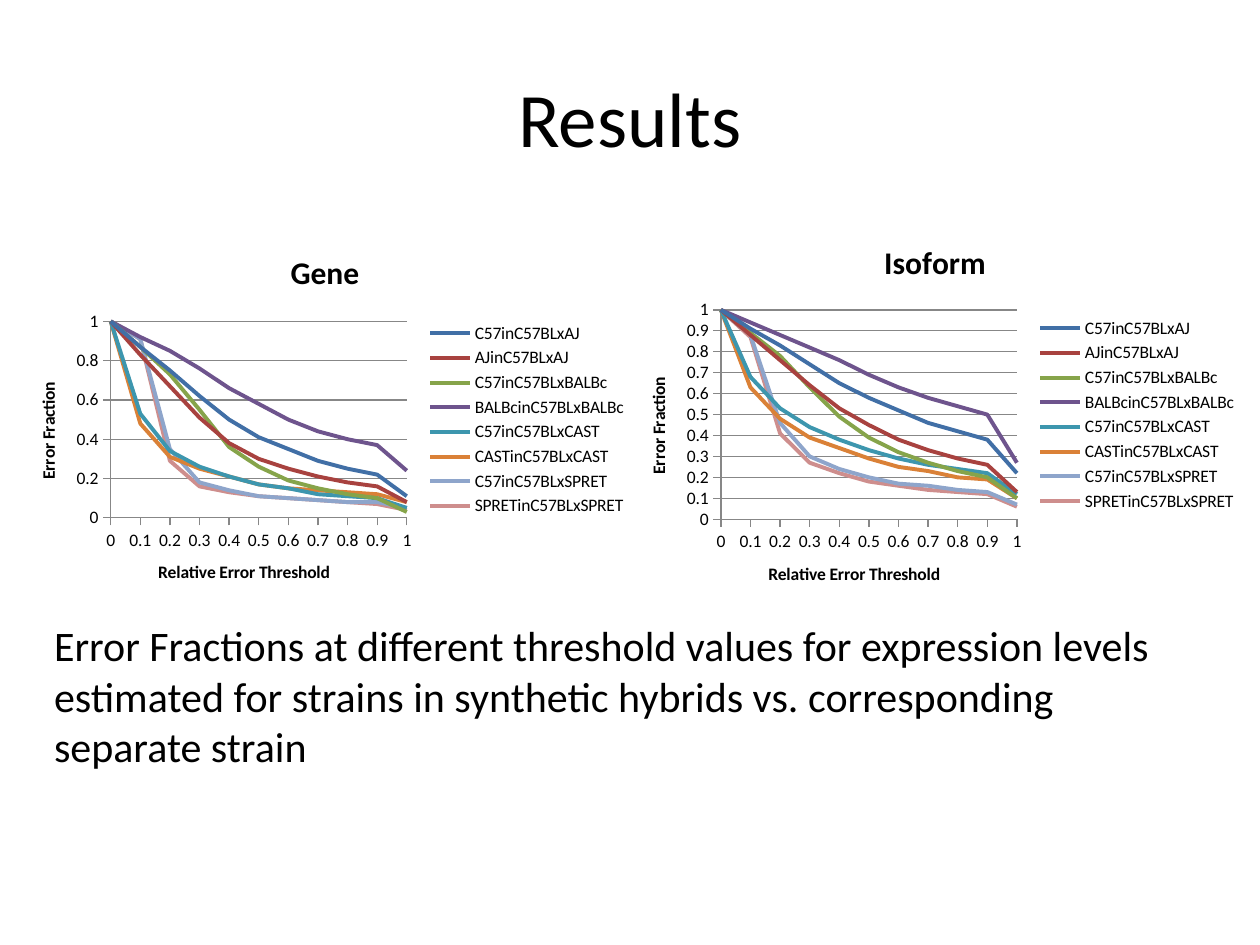
import pptx
import pptx.util
import pptx.chart.data
import pptx.dml.color
import pptx.enum.chart
import pptx.enum.text
import pptx.oxml

Cm = pptx.util.Cm
Pt = pptx.util.Pt
RGBColor = pptx.dml.color.RGBColor

FONT = "Calibri"
BLACK = RGBColor(0x00, 0x00, 0x00)
GRAY = RGBColor(0x87, 0x87, 0x87)

TITLE = "Results"
CAPTION = [
    "Error Fractions at different threshold values for expression levels "
    "estimated for strains in synthetic hybrids vs. corresponding",
    "separate strain",
]
X_TITLE = "Relative Error Threshold"
Y_TITLE = "Error Fraction"
THRESHOLDS = [step / 10 for step in range(11)]

STRAINS = [
    ("C57inC57BLxAJ", RGBColor(0x41, 0x6F, 0xA6)),
    ("AJinC57BLxAJ", RGBColor(0xA8, 0x42, 0x3F)),
    ("C57inC57BLxBALBc", RGBColor(0x86, 0xA4, 0x4A)),
    ("BALBcinC57BLxBALBc", RGBColor(0x6E, 0x54, 0x8D)),
    ("C57inC57BLxCAST", RGBColor(0x3D, 0x96, 0xAE)),
    ("CASTinC57BLxCAST", RGBColor(0xDA, 0x81, 0x37)),
    ("C57inC57BLxSPRET", RGBColor(0x8E, 0xA5, 0xCB)),
    ("SPRETinC57BLxSPRET", RGBColor(0xCE, 0x8E, 0x8D)),
]

CHARTS = [
    {
        "title": "Gene",
        "box": (0.2, 4.65, 12.7, 7.62),
        "plot": (0.16, 0.24, 0.47, 0.52),
        "unit": 0.2,
        "fractions": [
            [1, 0.87, 0.75, 0.62, 0.5, 0.41, 0.35, 0.29, 0.25, 0.22, 0.11],
            [1, 0.83, 0.67, 0.51, 0.38, 0.3, 0.25, 0.21, 0.18, 0.16, 0.08],
            [1, 0.87, 0.73, 0.55, 0.36, 0.26, 0.19, 0.15, 0.12, 0.1, 0.03],
            [1, 0.92, 0.85, 0.76, 0.66, 0.58, 0.5, 0.44, 0.4, 0.37, 0.24],
            [1, 0.53, 0.34, 0.26, 0.21, 0.17, 0.15, 0.12, 0.11, 0.1, 0.05],
            [1, 0.48, 0.31, 0.25, 0.21, 0.17, 0.15, 0.14, 0.13, 0.12, 0.08],
            [1, 0.91, 0.35, 0.18, 0.14, 0.11, 0.1, 0.09, 0.08, 0.08, 0.05],
            [1, 0.91, 0.29, 0.16, 0.13, 0.11, 0.1, 0.09, 0.08, 0.07, 0.04],
        ],
    },
    {
        "title": "Isoform",
        "box": (12.5, 4.45, 12.7, 7.82),
        "plot": (0.16, 0.23, 0.47, 0.54),
        "unit": 0.1,
        "fractions": [
            [1, 0.91, 0.83, 0.74, 0.65, 0.58, 0.52, 0.46, 0.42, 0.38, 0.22],
            [1, 0.88, 0.76, 0.64, 0.53, 0.45, 0.38, 0.33, 0.29, 0.26, 0.13],
            [1, 0.89, 0.78, 0.63, 0.49, 0.39, 0.32, 0.27, 0.23, 0.2, 0.1],
            [1, 0.94, 0.88, 0.82, 0.76, 0.69, 0.63, 0.58, 0.54, 0.5, 0.27],
            [1, 0.68, 0.53, 0.44, 0.38, 0.33, 0.29, 0.26, 0.24, 0.22, 0.12],
            [1, 0.63, 0.48, 0.39, 0.34, 0.29, 0.25, 0.23, 0.2, 0.19, 0.1],
            [1, 0.88, 0.46, 0.3, 0.24, 0.2, 0.17, 0.16, 0.14, 0.13, 0.07],
            [1, 0.87, 0.41, 0.27, 0.22, 0.18, 0.16, 0.14, 0.13, 0.12, 0.06],
        ],
    },
]


def write_text(text_frame, text, size, bold=False, align=None):
    lines = [text] if isinstance(text, str) else text
    for index, line in enumerate(lines):
        paragraph = text_frame.add_paragraph() if index else text_frame.paragraphs[0]
        paragraph.alignment = align
        run = paragraph.add_run()
        run.text = line
        run.font.name = FONT
        run.font.size = Pt(size)
        run.font.bold = bold
        run.font.color.rgb = BLACK


def place_plot(chart, fractions):
    namespace = "http://schemas.openxmlformats.org/drawingml/2006/chart"
    parts = "".join(
        f'<c:{name} val="{value}"/>' for name, value in zip("xywh", fractions)
    )
    layout = pptx.oxml.parse_xml(
        f'<c:layout xmlns:c="{namespace}"><c:manualLayout>'
        '<c:layoutTarget val="inner"/><c:xMode val="edge"/><c:yMode val="edge"/>'
        f"{parts}</c:manualLayout></c:layout>"
    )
    plot_area = chart.element.find(f".//{{{namespace}}}plotArea")
    for old_layout in plot_area.findall(f"{{{namespace}}}layout"):
        plot_area.remove(old_layout)
    plot_area.insert(0, layout)


def format_axis(axis, title, unit, gridlines):
    axis.minimum_scale, axis.maximum_scale = 0, 1
    axis.major_unit = unit
    axis.major_tick_mark = pptx.enum.chart.XL_TICK_MARK.OUTSIDE
    axis.minor_tick_mark = pptx.enum.chart.XL_TICK_MARK.NONE
    axis.tick_labels.number_format = "General"
    axis.tick_labels.number_format_is_linked = False
    axis.format.line.color.rgb = GRAY
    axis.has_major_gridlines = gridlines
    if gridlines:
        axis.major_gridlines.format.line.color.rgb = GRAY
    write_text(axis.axis_title.text_frame, title, size=10, bold=True)


def add_error_chart(slide, content):
    data = pptx.chart.data.XyChartData()
    for (name, _), fractions in zip(STRAINS, content["fractions"]):
        series = data.add_series(name)
        for threshold, fraction in zip(THRESHOLDS, fractions):
            series.add_data_point(threshold, fraction)
    chart = slide.shapes.add_chart(
        pptx.enum.chart.XL_CHART_TYPE.XY_SCATTER_SMOOTH_NO_MARKERS,
        *map(Cm, content["box"]),
        data,
    ).chart
    chart.font.name = FONT
    chart.font.size = Pt(10)
    chart.font.color.rgb = BLACK
    chart.has_title = True
    write_text(chart.chart_title.text_frame, content["title"], size=18, bold=True)
    chart.has_legend = True
    chart.legend.position = pptx.enum.chart.XL_LEGEND_POSITION.RIGHT
    chart.legend.include_in_layout = False
    chart.plots[0].vary_by_categories = False
    for series, (_, color) in zip(chart.plots[0].series, STRAINS):
        series.format.line.color.rgb = color
        series.format.line.width = Pt(2.25)
        series.marker.style = pptx.enum.chart.XL_MARKER_STYLE.NONE
    format_axis(chart.category_axis, X_TITLE, unit=0.1, gridlines=False)
    format_axis(chart.value_axis, Y_TITLE, unit=content["unit"], gridlines=True)
    place_plot(chart, content["plot"])


def main():
    presentation = pptx.Presentation()
    presentation.slide_width, presentation.slide_height = Cm(25.4), Cm(19.05)
    slide = presentation.slides.add_slide(presentation.slide_layouts[5])

    title = slide.shapes.title
    title.left, title.top, title.width, title.height = map(Cm, (1.27, 0.76, 22.86, 3.18))
    title.text_frame.vertical_anchor = pptx.enum.text.MSO_ANCHOR.MIDDLE
    write_text(title.text_frame, TITLE, size=44, align=pptx.enum.text.PP_ALIGN.CENTER)

    for content in CHARTS:
        add_error_chart(slide, content)

    caption = slide.shapes.add_textbox(*map(Cm, (0.84, 12.37, 23.93, 3.33)))
    caption.text_frame.word_wrap = True
    caption.text_frame.auto_size = pptx.enum.text.MSO_AUTO_SIZE.SHAPE_TO_FIT_TEXT
    write_text(caption.text_frame, CAPTION, size=24)

    presentation.save("out.pptx")


if __name__ == "__main__":
    main()
